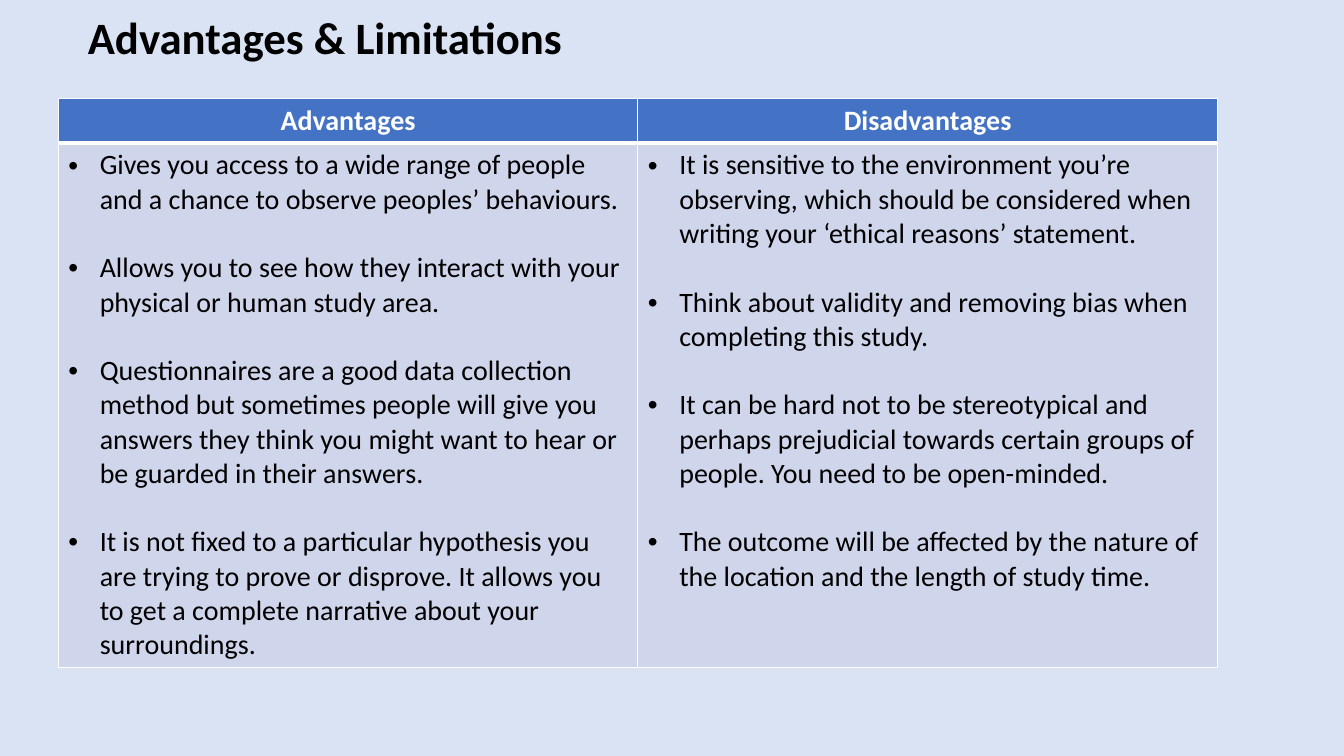
from lxml import etree
from pptx import Presentation
from pptx.dml.color import RGBColor
from pptx.enum import text
from pptx.oxml import ns
from pptx.util import Cm, Pt

TITLE = "Advantages & Limitations"
LISTS = {
    "Advantages": [
        "Gives you access to a wide range of people and a chance to observe peoples’ behaviours.",
        "Allows you to see how they interact with your physical or human study area.",
        "Questionnaires are a good data collection method but sometimes people will give you "
        "answers they think you might want to hear or be guarded in their answers.",
        "It is not fixed to a particular hypothesis you are trying to prove or disprove. "
        "It allows you to get a complete narrative about your surroundings.",
    ],
    "Disadvantages": [
        "It is sensitive to the environment you’re observing, which should be considered when "
        "writing your ‘ethical reasons’ statement.",
        "Think about validity and removing bias when completing this study.",
        "It can be hard not to be stereotypical and perhaps prejudicial towards certain groups "
        "of people. You need to be open-minded.",
        "The outcome will be affected by the nature of the location and the length of study time.",
    ],
}
COLORS = {"back": "DAE3F3", "head": "4472C4", "body": "CFD5EA", "white": "FFFFFF", "black": "000000"}
FONT = "Calibri"
WIDTH = Cm(29.21)
ROWS = [Cm(1.1), Cm(13.22)]
INDENT = Cm(0.79)
GAP = Pt(24.4)


def color(name):
    return RGBColor.from_string(COLORS[name])


def style(par, size, name, bold):
    par.font.name = FONT
    par.font.size = Pt(size)
    par.font.bold = bold
    par.font.color.rgb = color(name)


def paint(cell, name, base):
    props = cell._tc.get_or_add_tcPr()
    for side, width in (("lnL", 1), ("lnR", 1), ("lnT", 1), ("lnB", base)):
        line = etree.SubElement(props, ns.qn("a:" + side), w=str(Pt(width)))
        fill = etree.SubElement(line, ns.qn("a:solidFill"))
        etree.SubElement(fill, ns.qn("a:srgbClr"), val=COLORS["white"])
    cell.fill.solid()
    cell.fill.fore_color.rgb = color(name)


def bullet(par):
    props = par._p.get_or_add_pPr()
    props.set("marL", str(INDENT))
    props.set("indent", str(-INDENT))
    font = etree.Element(ns.qn("a:buFont"), typeface="Arial")
    mark = etree.Element(ns.qn("a:buChar"), char="•")
    last = props.find(ns.qn("a:defRPr"))
    last.addprevious(font)
    last.addprevious(mark)


def add_title(slide):
    title = slide.shapes.title
    title.left, title.top, title.width, title.height = Cm(1.96), Cm(-0.84), WIDTH, Cm(3.68)
    frame = title.text_frame
    frame.text = TITLE
    frame.auto_size = text.MSO_AUTO_SIZE.NONE
    frame.vertical_anchor = text.MSO_ANCHOR.MIDDLE
    par = frame.paragraphs[0]
    par.alignment = text.PP_ALIGN.LEFT
    par.line_spacing = 0.9
    style(par, 32, "black", True)


def add_lists(slide):
    table = slide.shapes.add_table(2, len(LISTS), Cm(1.47), Cm(2.49), WIDTH, sum(ROWS)).table
    for row, height in zip(table.rows, ROWS):
        row.height = height
    for col, (label, items) in enumerate(LISTS.items()):
        head, body = table.cell(0, col), table.cell(1, col)
        paint(head, "head", 3)
        paint(body, "body", 1)
        head.text = label
        par = head.text_frame.paragraphs[0]
        par.alignment = text.PP_ALIGN.CENTER
        style(par, 20, "white", True)
        body.text = "\n".join(items)
        for num, par in enumerate(body.text_frame.paragraphs):
            style(par, 20, "black", False)
            if num:
                par.space_before = GAP
            bullet(par)


def main():
    deck = Presentation()
    deck.slide_width, deck.slide_height = Cm(33.87), Cm(19.05)
    slide = deck.slides.add_slide(deck.slide_layouts[5])
    slide.background.fill.solid()
    slide.background.fill.fore_color.rgb = color("back")
    add_title(slide)
    add_lists(slide)
    deck.save("out.pptx")


if __name__ == "__main__":
    main()
